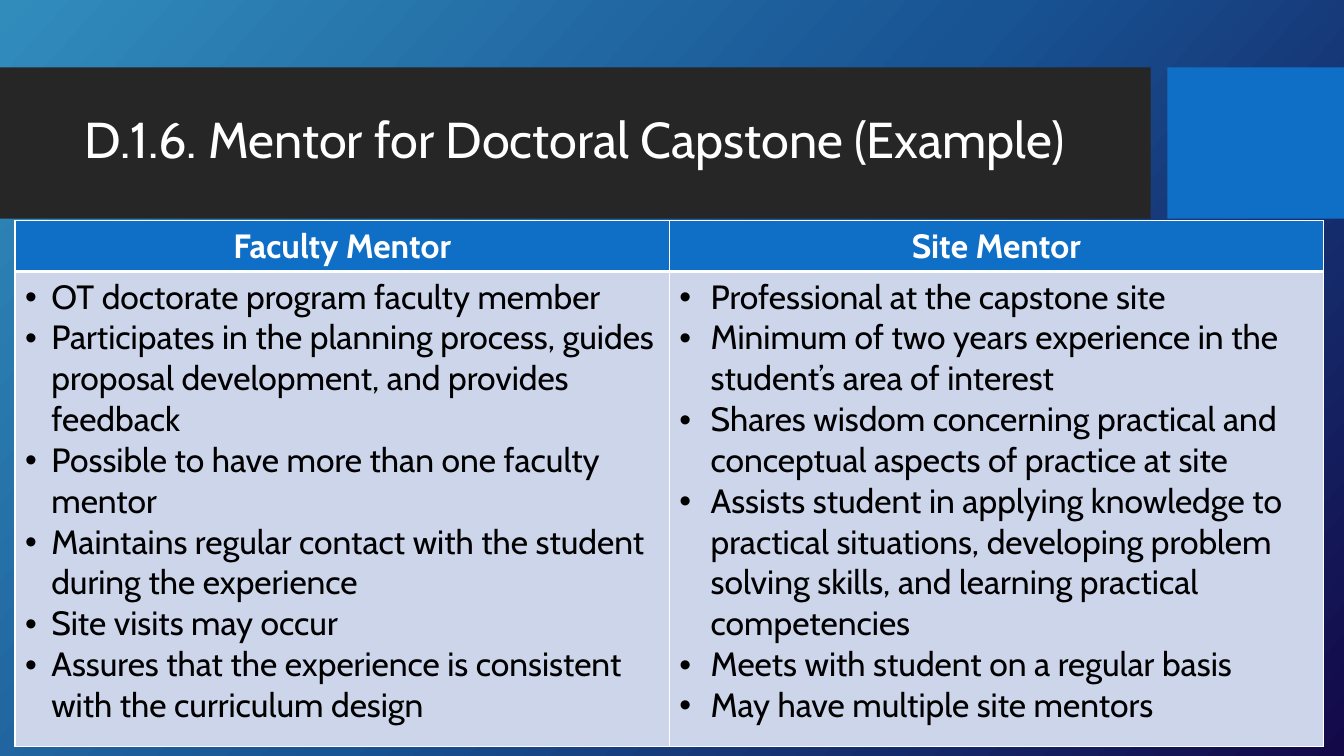
from copy import deepcopy

from lxml import etree
from pptx import Presentation
from pptx.dml.color import RGBColor
from pptx.enum import shapes, text
from pptx.oxml.ns import qn
from pptx.util import Cm, Pt

FONT = "Cabin"
WHITE = RGBColor(0xFF, 0xFF, 0xFF)
BLACK = RGBColor(0, 0, 0)
CHARCOAL = RGBColor(0x26, 0x26, 0x26)
BLUE = RGBColor(0x0F, 0x6F, 0xC6)
PALE_BLUE = RGBColor(0xCC, 0xD5, 0xEA)
BACKGROUND = [
    (0, RGBColor(0x31, 0x8C, 0xBC)),
    (0.5, RGBColor(0x18, 0x53, 0x93)),
    (1, RGBColor(0x13, 0x09, 0x49)),
]
MENTORS = [
    ("Faculty Mentor", Cm(0.66), [
        "OT doctorate program faculty member",
        "Participates in the planning process, guides proposal development, and provides feedback",
        "Possible to have more than one faculty mentor",
        "Maintains regular contact with the student during the experience",
        "Site visits may occur",
        "Assures that the experience is consistent with the curriculum design",
    ]),
    ("Site Mentor", Cm(0.79), [
        "Professional at the capstone site",
        "Minimum of two years experience in the student’s area of interest",
        "Shares wisdom concerning practical and conceptual aspects of practice at site",
        "Assists student in applying knowledge to practical situations, developing problem "
        "solving skills, and learning practical competencies",
        "Meets with student on a regular basis",
        "May have multiple site mentors",
    ]),
]


def paint_background(page):
    """Fill the page with a diagonal three-colour gradient."""
    fill = page.background.fill
    fill.gradient()
    fill.gradient_angle = 318
    stop_list = page.element.find(".//" + qn("a:gsLst"))
    stop_list.append(deepcopy(stop_list[-1]))
    for stop, (position, color) in zip(fill.gradient_stops, BACKGROUND):
        stop.position = position
        stop.color.rgb = color


def style_font(font, size, color, bold=False):
    """Apply the slide's typeface with the given look."""
    font.name = FONT
    font.size = Pt(size)
    font.color.rgb = color
    font.bold = bold


def add_block(page, left, top, width, height, color):
    """Add a plain rectangle and send it behind the placeholders."""
    block = page.shapes.add_shape(shapes.MSO_SHAPE.RECTANGLE, left, top, width, height)
    block.shadow.inherit = False
    block.fill.solid()
    block.fill.fore_color.rgb = color
    block.line.fill.background()
    page.shapes.title.element.addprevious(block.element)


def add_title_band(page, left, top, width, height, wording):
    """Draw the dark title band with its blue end block."""
    accent_width, gap = Cm(4.45), Cm(0.42)
    band_width = width - accent_width - gap
    add_block(page, left, top, band_width, height, CHARCOAL)
    add_block(page, left + width - accent_width, top, accent_width, height, BLUE)
    title = page.shapes.title
    title.left, title.top = left + Cm(1.88), top + Cm(0.38)
    title.width, title.height = band_width - Cm(2.29), Cm(3)
    frame = title.text_frame
    frame.text = wording
    frame.word_wrap = True
    frame.auto_size = text.MSO_AUTO_SIZE.NONE
    frame.vertical_anchor = text.MSO_ANCHOR.MIDDLE
    para = frame.paragraphs[0]
    para.alignment = text.PP_ALIGN.LEFT
    para.line_spacing = 0.9
    style_font(para.runs[0].font, 36, WHITE)


def paint_cell(cell, color, top_line, bottom_line):
    """Fill a cell and draw its white borders, with widths in points."""
    cell.fill.solid()
    cell.fill.fore_color.rgb = color
    properties = cell._tc.get_or_add_tcPr()
    widths = {"lnL": 1, "lnR": 1, "lnT": top_line, "lnB": bottom_line}
    for index, (side, width) in enumerate(widths.items()):
        line = etree.Element(qn(f"a:{side}"), w=str(Pt(width)))
        solid = etree.SubElement(line, qn("a:solidFill"))
        etree.SubElement(solid, qn("a:srgbClr"), val=str(WHITE))
        properties.insert(index, line)


def write_bullets(frame, items, indent):
    """Write bulleted paragraphs with a hanging indent."""
    frame.text = "\n".join(items)
    for para in frame.paragraphs:
        properties = para._p.get_or_add_pPr()
        properties.set("marL", str(indent))
        properties.set("indent", str(-indent))
        etree.SubElement(properties, qn("a:buFont"), typeface="Arial")
        etree.SubElement(properties, qn("a:buChar"), char="•")
        style_font(para.runs[0].font, 24, BLACK)


def add_mentor_table(page, left, top, width, height):
    """Place the two-column comparison of mentors."""
    table = page.shapes.add_table(2, len(MENTORS), left, top, width, height).table
    table.rows[0].height = Cm(1.19)
    table.rows[1].height = height - Cm(1.19)
    for column, (heading, indent, items) in enumerate(MENTORS):
        table.columns[column].width = width // len(MENTORS)
        header, body = table.cell(0, column), table.cell(1, column)
        paint_cell(header, BLUE, 1, 3)
        paint_cell(body, PALE_BLUE, 3, 1)
        header.text_frame.text = heading
        para = header.text_frame.paragraphs[0]
        para.alignment = text.PP_ALIGN.CENTER
        style_font(para.runs[0].font, 24, WHITE, bold=True)
        write_bullets(body.text_frame, items, indent)


def main():
    """Build and save the deck."""
    deck = Presentation()
    deck.slide_width, deck.slide_height = Cm(33.87), Cm(19.05)
    page = deck.slides.add_slide(deck.slide_layouts.get_by_name("Title Only"))
    paint_background(page)
    add_title_band(page, 0, Cm(1.7), deck.slide_width, Cm(3.81),
                   "D.1.6. Mentor for Doctoral Capstone (Example)")
    add_mentor_table(page, Cm(0.38), Cm(5.56), Cm(32.97), Cm(13.16))
    deck.save("out.pptx")


if __name__ == "__main__":
    main()
